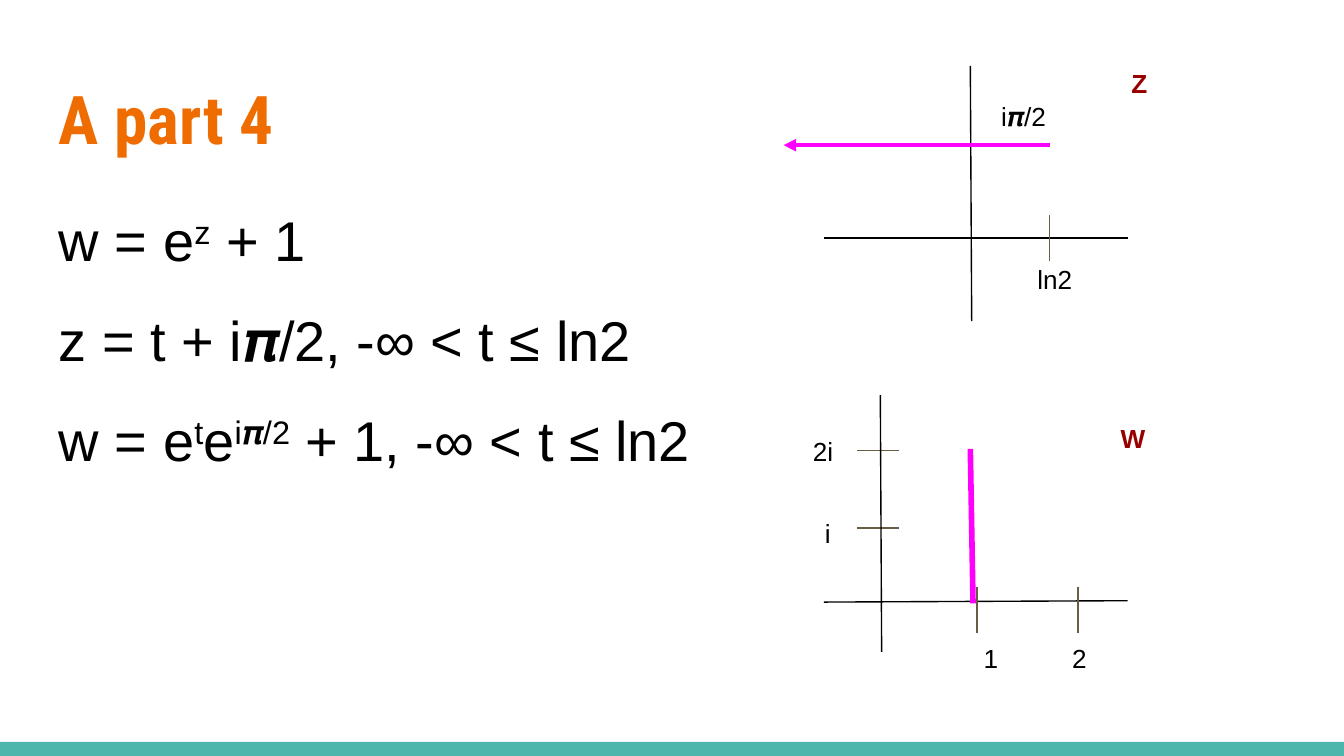
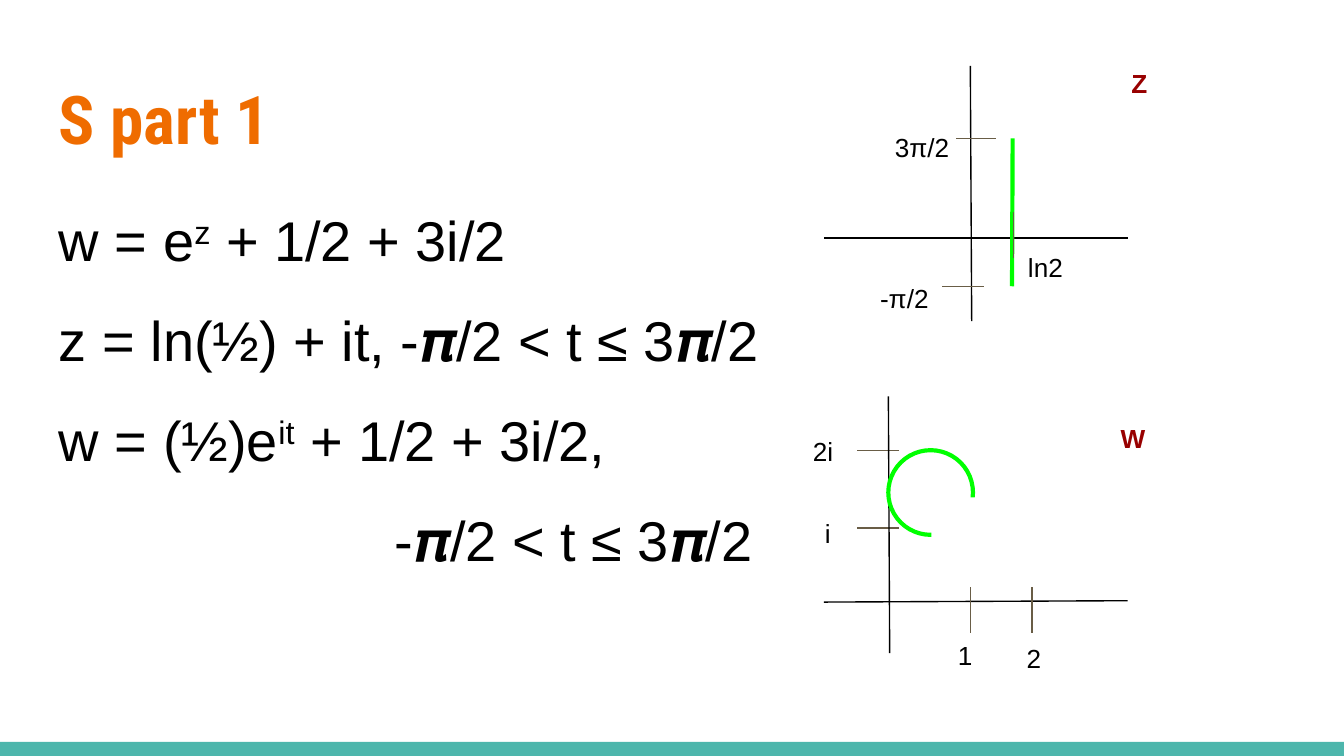
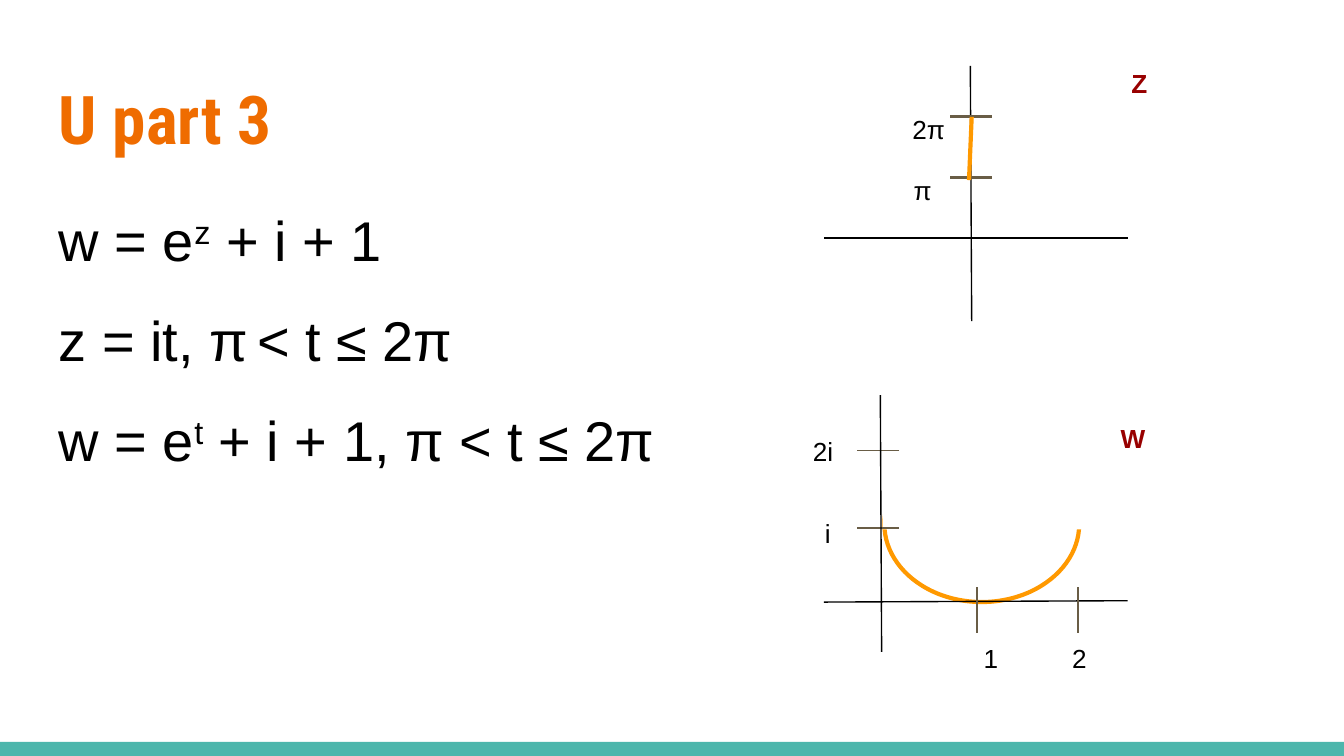
from lxml import etree
from pptx import Presentation
from pptx import util as u
from pptx.dml.color import RGBColor
from pptx.enum import shapes, text
from pptx.oxml.ns import qn

PX = 4572  # EMU in one px, 200 px to the inch
WIDTH, HEIGHT = 2000, 1125

BLACK = RGBColor(0x00, 0x00, 0x00)
WHITE = RGBColor(0xFF, 0xFF, 0xFF)
TEAL = RGBColor(0x4D, 0xB6, 0xAC)
ORANGE = RGBColor(0xEF, 0x6C, 0x00)
BROWN = RGBColor(0x69, 0x5D, 0x46)
DARK_RED = RGBColor(0x98, 0x00, 0x00)
MAGENTA = RGBColor(0xFF, 0x00, 0xFF)
GREEN = RGBColor(0x00, 0xFF, 0x00)
AMBER = RGBColor(0xFF, 0x99, 0x00)


def add_text(s, box, content, size=14, color=BLACK, font="Arial", bold=False,
             anchor=text.MSO_ANCHOR.TOP, spacing=None, after=None):
    """Add one paragraph a line; ^x^ raises x, and ^ ^ is a narrow space.

    A line that starts with a tab is indented.
    """
    tf = s.shapes.add_textbox(*(v * PX for v in box)).text_frame
    tf.word_wrap = True
    tf.vertical_anchor = anchor
    tf.margin_left = tf.margin_right = tf.margin_top = tf.margin_bottom = 20 * PX
    for i, line in enumerate(content.split("\n")):
        p = tf.paragraphs[0] if i == 0 else tf.add_paragraph()
        p.line_spacing = spacing
        if after:
            p.space_after = u.Pt(after)
        if line.startswith("\t"):
            pPr = p._p.get_or_add_pPr()
            pPr.set("marL", str(400 * PX))
            pPr.set("indent", str(100 * PX))
        for j, part in enumerate(line.strip("\t").split("^")):
            if not part:
                continue
            r = p.add_run()
            r.text = part
            r.font.name, r.font.size = font, u.Pt(size)
            r.font.bold, r.font.color.rgb = bold, color
            if j % 2 and part == " ":
                r.font.name, r.font.size = "Open Sans", u.Pt(18)
            elif j % 2:
                r._r.get_or_add_rPr().set("baseline", "30000")


def add_line(s, ends, color, width, arrow=False):
    sp = s.shapes.add_connector(shapes.MSO_CONNECTOR.STRAIGHT, *(v * PX for v in ends))
    sp.line.color.rgb, sp.line.width = color, u.Pt(width)
    if arrow:
        etree.SubElement(sp.line._get_or_add_ln(), qn("a:tailEnd"), type="triangle")
    etree.SubElement(sp._element.spPr, qn("a:effectLst"))


# Marks are (kind, geometry, ...) and are drawn in list order.
Z_AXES = [("line", (1444, 98, 1446, 478), BLACK, 0.75),
          ("line", (1678, 354, 1226, 354), BLACK, 0.75)]
W_REAL_AXIS = ("line", (1678, 894, 1226, 896), BLACK, 0.75)
I_TICKS = [("line", (1338, y, 1276, y), BROWN, 0.75) for y in (786, 670)]
PLANE_LABELS = [("label", (1190, 628, 74, 76), "2i"),
                ("label", (1208, 750, 52, 46), "i"),
                ("label", (1664, 80, 92, 76), "Z", DARK_RED, True),
                ("label", (1648, 608, 110, 76), "W", DARK_RED, True)]


def_planes = Z_AXES + [W_REAL_AXIS] + I_TICKS + PLANE_LABELS
wide_planes = def_planes + [
    ("line", (1310, 588, 1312, 970), BLACK, 0.75),
    *[("line", (x, 874, x, 942), BROWN, 0.75) for x in (1454, 1604)],
    ("label", (1444, 936, 92, 76), "1"),
    ("label", (1576, 936, 92, 68), "2"),
]
narrow_planes = def_planes + [
    ("line", (1322, 590, 1324, 972), BLACK, 0.75),
    *[("line", (x, 874, x, 942), BROWN, 0.75) for x in (1444, 1536)],
    ("label", (1406, 932, 92, 76), "1"),
    ("label", (1508, 936, 92, 68), "2"),
]

ray_marks = wide_planes + [
    ("line", (1562, 320, 1562, 388), BROWN, 0.75),
    ("label", (1524, 372, 136, 126), "ln2"),
    ("line", (1562, 216, 1166, 216), MAGENTA, 2.25, True),
    ("label", (1470, 130, 166, 68), "i𝝅/2"),
    ("line", (1444, 668, 1448, 898), MAGENTA, 3),
]
circle_marks = narrow_planes + [
    ("mask", (1444, 658, 118, 126)),
    ("ellipse", (1322, 670, 126, 126), GREEN),
    ("mask", (1386, 740, 92, 76)),
    ("line", (1507, 206, 1506, 426), GREEN, 2.25),
    ("line", (1508, 316, 1508, 384), BROWN, 0.75),
    ("line", (1482, 206, 1422, 206), BROWN, 0.75),
    ("line", (1464, 426, 1402, 426), BROWN, 0.75),
    ("label", (1290, 400, 132, 76), "-π/2"),
    ("label", (1312, 176, 132, 76), "3π/2"),
    ("label", (1510, 354, 110, 68), "ln2"),
]
half_circle_marks = [
    ("ellipse", (1316, 664, 290, 232), AMBER),
    ("mask", (1314, 654, 334, 134)),
    *wide_planes,
    *[("line", (1476, y, 1414, y), BROWN, 1.5) for y in (174, 264)],
    ("label", (1340, 240, 74, 76), "π"),
    ("label", (1338, 148, 110, 76), "2π"),
    ("line", (1446, 174, 1442, 268), AMBER, 2.25),
]

SLIDES = [
    ("A part 4", 1864,
     "w = e^z^ + 1\n"
     "z = t + i𝝅/2, -∞ < t ≤ ln2\n"
     "w = e^t^e^i𝝅/2^ + 1, -∞ < t ≤ ln2", ray_marks),
    ("S part 1", 1864,
     "w = e^z^ + 1/2 + 3i/2\n"
     "z = ln(½) + it, -𝝅/2 < t ≤ 3𝝅/2\n"
     "w = (½)e^it^ + 1/2 + 3i/2,\n"
     "\t-𝝅/2 < t ≤ 3𝝅/2", circle_marks),
    ("U part 3", 1108,
     "w = e^z^ + i + 1\n"
     "z = it, π^ ^< t ≤ 2π\n"
     "w = e^t^ + i + 1, π < t ≤ 2π", half_circle_marks),
]

prs = Presentation()
prs.slide_width, prs.slide_height = WIDTH * PX, HEIGHT * PX

for title, body_width, formulas, marks in SLIDES:
    s = prs.slides.add_slide(prs.slide_layouts[6])
    s.background.fill.solid()
    s.background.fill.fore_color.rgb = WHITE

    band = s.shapes.add_shape(shapes.MSO_SHAPE.RECTANGLE, 0, 1104 * PX, WIDTH * PX, 21 * PX)
    band.shadow.inherit = False
    band.fill.solid()
    band.fill.fore_color.rgb = TEAL
    band.line.fill.background()

    add_text(s, (68, 98, 1864, 154), title, size=36, color=ORANGE,
             font="Roboto Condensed", bold=True, anchor=text.MSO_ANCHOR.MIDDLE)
    add_text(s, (68, 276, body_width, 722), formulas, size=30, spacing=1.1, after=14)

    for kind, geometry, *style in marks:
        if kind == "line":
            add_line(s, geometry, *style)
        elif kind == "label":
            label, color, bold = (style + [BLACK, False])[:3]
            add_text(s, geometry, label, color=color, bold=bold)
        else:
            preset = (shapes.MSO_SHAPE.OVAL if kind == "ellipse"
                      else shapes.MSO_SHAPE.RECTANGLE)
            sp = s.shapes.add_shape(preset, *(v * PX for v in geometry))
            sp.shadow.inherit = False
            if kind == "ellipse":
                sp.fill.background()
                sp.line.color.rgb, sp.line.width = style[0], u.Pt(2.25)
            else:
                sp.fill.solid()
                sp.fill.fore_color.rgb = WHITE
                sp.line.fill.background()

prs.save("out.pptx")
